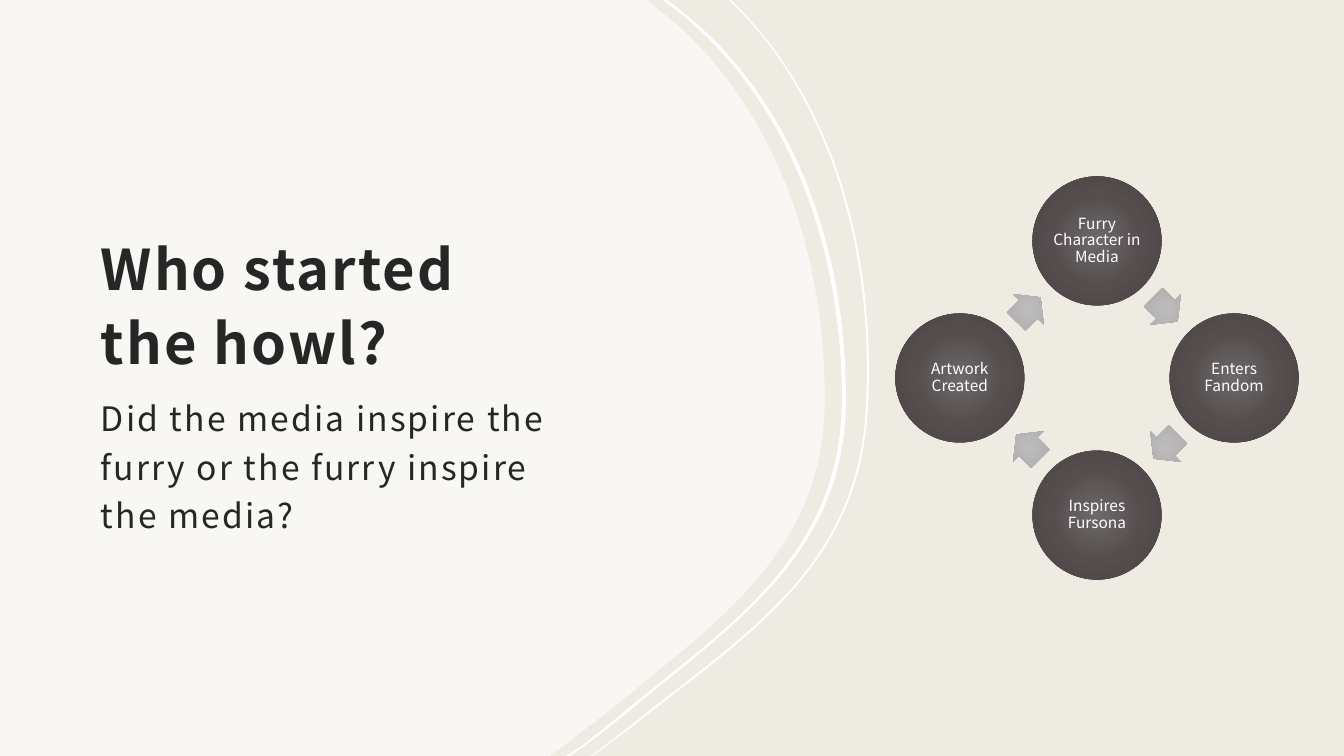
"""Builds the slide asking who started the howl, with its four-step cycle."""
import math

import lxml.etree
import pptx
import pptx.dml.color
import pptx.enum.shapes
import pptx.enum.text
import pptx.oxml
import pptx.oxml.ns
import pptx.util

TITLE = "Who started \vthe howl?"
SUBTITLE = "Did the media inspire the furry or the furry inspire the media?"
STEPS = ["Furry Character in Media", "Enters Fandom", "Inspires Fursona", "Artwork Created"]

FONT = "Noto Sans CJK JP"
SAND = pptx.dml.color.RGBColor(0xEE, 0xEB, 0xE2)
WHITE = pptx.dml.color.RGBColor(0xFF, 0xFF, 0xFF)
INK = pptx.dml.color.RGBColor(0x26, 0x26, 0x26)
STEP_SHADES = [pptx.dml.color.RGBColor(0x6E, 0x68, 0x68),
               pptx.dml.color.RGBColor(0x56, 0x4E, 0x4E),
               pptx.dml.color.RGBColor(0x4A, 0x41, 0x41)]
ARROW_SHADES = [pptx.dml.color.RGBColor(0xBD, 0xBC, 0xBC),
                pptx.dml.color.RGBColor(0xB4, 0xB2, 0xB2),
                pptx.dml.color.RGBColor(0x99, 0x97, 0x97)]

SLIDE_W, SLIDE_H = 13.33, 7.5
CYCLE_X, CYCLE_Y, CYCLE_RADIUS = 10.88, SLIDE_H / 2, 1.36
STEP_SIZE = 1.28
ARROW_W, ARROW_H = 0.34, 0.43

# Pairs are line ends; sextuples are two control points and a curve end.
PANEL = [(0, 0), (6.41, 0), (6.42, 0.01), (7.55, 0.82, 8.18, 2.29, 8.18, 3.96),
         (8.18, 5.44, 7.16, 6.13, 6.13, 6.98), (5.94, 7.13, 5.75, 7.28, 5.56, 7.42),
         (5.45, 7.5), (0, 7.5)]
OUTER_RIBBON = [(7.23, 0), (7.25, 0), (7.28, 0.03), (8.21, 0.94, 8.69, 2.4, 8.61, 4.02),
                (8.54, 5.55, 7.52, 6.23, 6.46, 7.06), (6.27, 7.21, 6.08, 7.35, 5.89, 7.49),
                (5.88, 7.5), (5.85, 7.5), (5.87, 7.49),
                (6.06, 7.35, 6.25, 7.21, 6.44, 7.05), (7.5, 6.22, 8.52, 5.55, 8.59, 4.02),
                (8.67, 2.4, 8.19, 0.93, 7.26, 0.03)]
INNER_RIBBON = [(6.58, 0), (6.61, 0), (6.64, 0.02), (7.76, 0.83, 8.39, 2.29, 8.39, 3.96),
                (8.39, 5.43, 7.37, 6.13, 6.34, 6.97), (6.15, 7.13, 5.96, 7.28, 5.77, 7.42),
                (5.65, 7.5), (5.61, 7.5), (5.74, 7.42),
                (5.93, 7.28, 6.11, 7.13, 6.3, 6.97), (7.34, 6.13, 8.35, 5.43, 8.35, 3.96),
                (8.35, 2.29, 7.72, 0.83, 6.6, 0.02)]


def add_sweep(slide, outline, alpha=None):
    """Draw one white area bounded by lines and cubic curves."""
    ends = [(pptx.util.Inches(step[-2]), pptx.util.Inches(step[-1])) for step in outline]
    builder = slide.shapes.build_freeform(*ends[0], scale=1.0)
    builder.add_line_segments(ends[1:], close=True)
    sweep = builder.convert_to_shape()
    properties = sweep.element.spPr
    segments = list(next(properties.iter(pptx.oxml.ns.qn("a:path"))))
    for step, segment in zip(outline, segments):
        if len(step) == 6:
            segment.tag = pptx.oxml.ns.qn("a:cubicBezTo")
            for place_in_curve, (x, y) in enumerate((step[:2], step[2:4])):
                control = lxml.etree.Element(
                    pptx.oxml.ns.qn("a:pt"), x=str(pptx.util.Inches(x) - sweep.left),
                    y=str(pptx.util.Inches(y) - sweep.top))
                segment.insert(place_in_curve, control)
    sweep.shadow.inherit = False
    sweep.line.fill.background()
    sweep.fill.solid()
    sweep.fill.fore_color.rgb = WHITE
    if alpha:
        tint = next(properties.iter(pptx.oxml.ns.qn("a:srgbClr")))
        lxml.etree.SubElement(tint, pptx.oxml.ns.qn("a:alpha"), val=str(alpha * 1000))


def add_shaded(slide, preset, center_x, center_y, width, height, shades):
    """Draw a preset shape around a center with a round gradient."""
    shape = slide.shapes.add_shape(
        preset, pptx.util.Inches(center_x - width / 2), pptx.util.Inches(center_y - height / 2),
        pptx.util.Inches(width), pptx.util.Inches(height))
    shape.shadow.inherit = False
    shape.line.fill.background()
    shape.fill.gradient()
    stops = "".join(f'<a:gs pos="{place * 50000}"><a:srgbClr val="{shade}"/></a:gs>'
                    for place, shade in enumerate(shades))
    round_fill = pptx.oxml.parse_xml(
        f'<a:gradFill {pptx.oxml.ns.nsdecls("a")}><a:gsLst>{stops}</a:gsLst>'
        '<a:path path="circle"><a:fillToRect l="100000" t="100000" r="100000" b="100000"/>'
        '</a:path></a:gradFill>')
    properties = shape.element.spPr
    properties.replace(properties.find(pptx.oxml.ns.qn("a:gradFill")), round_fill)
    return shape


def write(shape, text, *, size, color, spacing, insets, anchor, align,
          bold=False, tracking=0, before=0):
    """Put formatted text into a shape."""
    frame = shape.text_frame
    frame.word_wrap = True
    frame.auto_size = pptx.enum.text.MSO_AUTO_SIZE.NONE
    frame.vertical_anchor = anchor
    (frame.margin_left, frame.margin_top,
     frame.margin_right, frame.margin_bottom) = map(pptx.util.Inches, insets)
    paragraph = frame.paragraphs[0]
    paragraph.text = text
    paragraph.alignment = align
    paragraph.line_spacing = spacing
    paragraph.space_before = pptx.util.Pt(before)
    for run in paragraph.runs:
        run.font.name = FONT
        run.font.size = pptx.util.Pt(size)
        run.font.bold = bold
        run.font.color.rgb = color
        properties = run.font._element
        properties.set("spc", str(int(tracking * 100)))
        lxml.etree.SubElement(properties, pptx.oxml.ns.qn("a:ea"), typeface=FONT)


def place(shape, left, top, width, height):
    """Move and size a placeholder."""
    shape.left, shape.top, shape.width, shape.height = map(
        pptx.util.Inches, (left, top, width, height))


def main():
    """Build and save the slide."""
    deck = pptx.Presentation()
    deck.slide_width, deck.slide_height = pptx.util.Inches(SLIDE_W), pptx.util.Inches(SLIDE_H)
    slide = deck.slides.add_slide(deck.slide_layouts[0])
    slide.background.fill.solid()
    slide.background.fill.fore_color.rgb = SAND

    add_sweep(slide, PANEL, alpha=60)
    add_sweep(slide, OUTER_RIBBON)
    add_sweep(slide, INNER_RIBBON)

    anchors, aligns = pptx.enum.text.MSO_ANCHOR, pptx.enum.text.PP_ALIGN
    title, subtitle = slide.shapes.title, slide.placeholders[1]
    place(title, 0.88, 1.82, 7.41, 3.12)
    write(title, TITLE, size=40, color=INK, spacing=1.1, insets=(0.12, 0.12, 0.12, 1.21),
          anchor=anchors.BOTTOM, align=aligns.LEFT, bold=True, tracking=1.5)
    place(subtitle, 0.88, 3.75, 4.92, 1.72)
    write(subtitle, SUBTITLE, size=24, color=INK, spacing=1.2, insets=(0.12, 0.12, 0.12, 0.1),
          anchor=anchors.TOP, align=aligns.LEFT, tracking=1.5, before=9.3)
    for words in (title, subtitle):
        slide.shapes._spTree.append(words.element)

    presets = pptx.enum.shapes.MSO_SHAPE
    arrow_radius = CYCLE_RADIUS * math.cos(math.pi / 4)
    for index, label in enumerate(STEPS):
        angle = index * math.tau / len(STEPS)
        step = add_shaded(slide, presets.OVAL, CYCLE_X + CYCLE_RADIUS * math.sin(angle),
                          CYCLE_Y - CYCLE_RADIUS * math.cos(angle),
                          STEP_SIZE, STEP_SIZE, STEP_SHADES)
        write(step, label, size=11, color=WHITE, spacing=0.9, insets=(0,) * 4,
              anchor=anchors.MIDDLE, align=aligns.CENTER)
        halfway = angle + math.pi / len(STEPS)
        arrow = add_shaded(slide, presets.RIGHT_ARROW, CYCLE_X + arrow_radius * math.sin(halfway),
                           CYCLE_Y - arrow_radius * math.cos(halfway),
                           ARROW_W, ARROW_H, ARROW_SHADES)
        arrow.adjustments[0], arrow.adjustments[1] = 0.6, 0.5
        arrow.rotation = math.degrees(halfway)

    deck.save("out.pptx")


if __name__ == "__main__":
    main()
